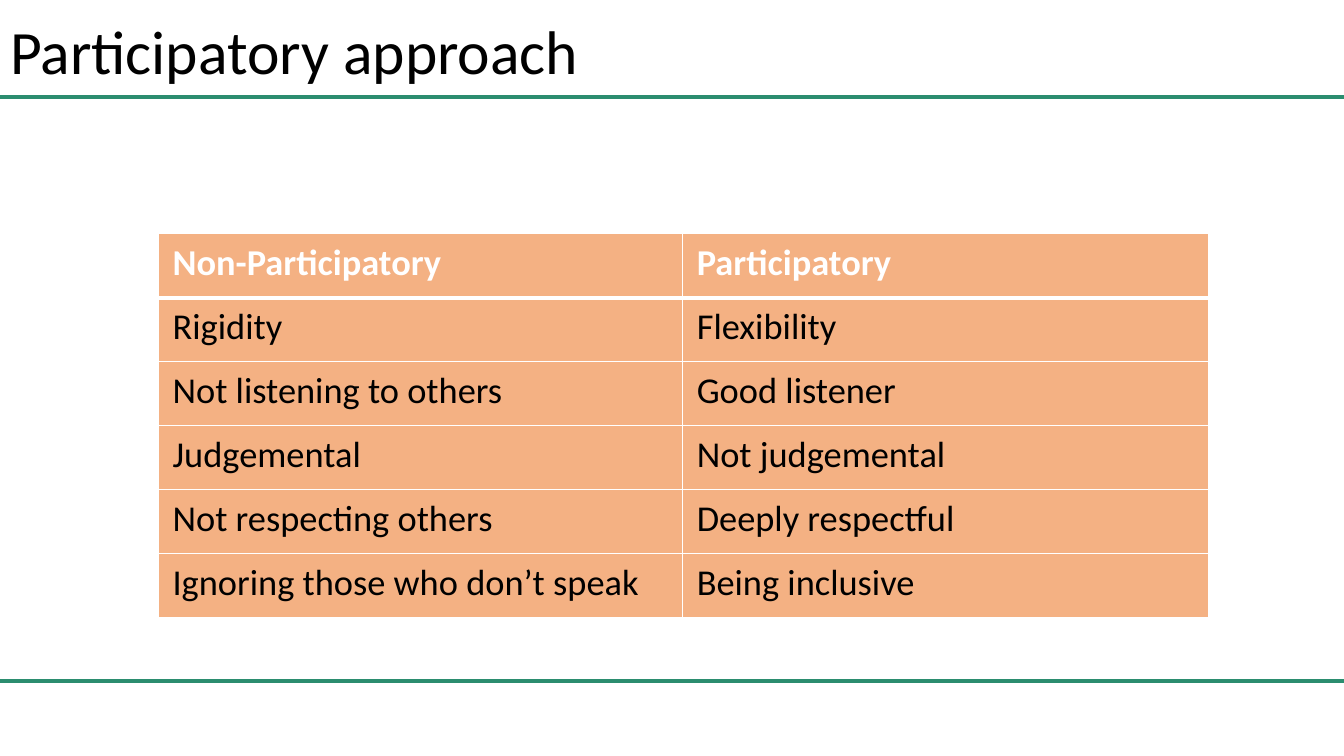
import pptx
import pptx.util
import pptx.dml.color
import pptx.enum.shapes
import pptx.enum.text
import pptx.oxml
import pptx.oxml.ns
from lxml import etree

Cm = pptx.util.Cm
Pt = pptx.util.Pt
FONT = "Calibri"
WIDTH = Cm(33.87)
COLORS = {"rule": "2B8D6F", "cell": "F4B183", "text": "000000", "light": "FFFFFF"}
ROWS = [
    ("Non-Participatory", "Participatory"),
    ("Rigidity", "Flexibility"),
    ("Not listening to others", "Good listener"),
    ("Judgemental", "Not judgemental"),
    ("Not respecting others", "Deeply respectful"),
    ("Ignoring those who don’t speak", "Being inclusive"),
]


def color(name):
    return pptx.dml.color.RGBColor.from_string(COLORS[name])


def add_run(para, text, size, tint, bold=False):
    run = para.add_run()
    run.text = text
    run.font.name = FONT
    run.font.size = Pt(size)
    run.font.bold = bold
    run.font.color.rgb = color(tint)


def add_rule(slide, top):
    kind = pptx.enum.shapes.MSO_CONNECTOR.STRAIGHT
    rule = slide.shapes.add_connector(kind, 0, top, WIDTH, top)
    rule.line.color.rgb = color("rule")
    rule.line.width = Pt(3)
    etree.SubElement(rule.element.spPr, pptx.oxml.ns.qn("a:effectLst"))


def add_title(slide, text):
    title = slide.shapes.title
    title.left, title.top = 0, Cm(0.05)
    title.width, title.height = Cm(29.21), Cm(2.64)
    frame = title.text_frame
    frame.word_wrap = True
    frame.auto_size = pptx.enum.text.MSO_AUTO_SIZE.NONE
    frame.vertical_anchor = pptx.enum.text.MSO_ANCHOR.MIDDLE
    para = frame.paragraphs[0]
    para.alignment = pptx.enum.text.PP_ALIGN.LEFT
    para.line_spacing = 0.9
    add_run(para, text, 44, "text")


def add_edge(cell, side, width):
    props = cell._tc.get_or_add_tcPr()
    props.append(pptx.oxml.parse_xml(
        f'<a:ln{side} {pptx.oxml.ns.nsdecls("a")} w="{Pt(width)}"><a:solidFill>'
        f'<a:srgbClr val="{COLORS["light"]}"/></a:solidFill></a:ln{side}>'))


def fill_cell(cell, text, row):
    cell.margin_left = cell.margin_right = Cm(0.36)
    cell.margin_top = cell.margin_bottom = Cm(0.18)
    head = row == 0
    edges = {"L": 1, "R": 1, "T": 3 if row == 1 else 1, "B": 3 if head else 1}
    for side, width in edges.items():
        add_edge(cell, side, width)
    cell.fill.solid()
    cell.fill.fore_color.rgb = color("cell")
    add_run(cell.text_frame.paragraphs[0], text, 26, "light" if head else "text", head)


def add_grid(slide, rows):
    frame = slide.shapes.add_table(len(rows), 2, Cm(3.99), Cm(5.89), Cm(26.47), Cm(9.68))
    table = frame.table
    table.horz_banding = False
    table.columns[0].width = Cm(13.21)
    table.columns[1].width = Cm(13.26)
    for r, texts in enumerate(rows):
        for c, text in enumerate(texts):
            fill_cell(table.cell(r, c), text, r)


def main():
    deck = pptx.Presentation()
    deck.slide_width, deck.slide_height = WIDTH, Cm(19.05)
    slide = deck.slides.add_slide(deck.slide_layouts[5])
    for top in (Cm(17.17), Cm(2.44)):
        add_rule(slide, top)
    add_title(slide, "Participatory approach")
    add_grid(slide, ROWS)
    deck.save("out.pptx")


if __name__ == "__main__":
    main()
